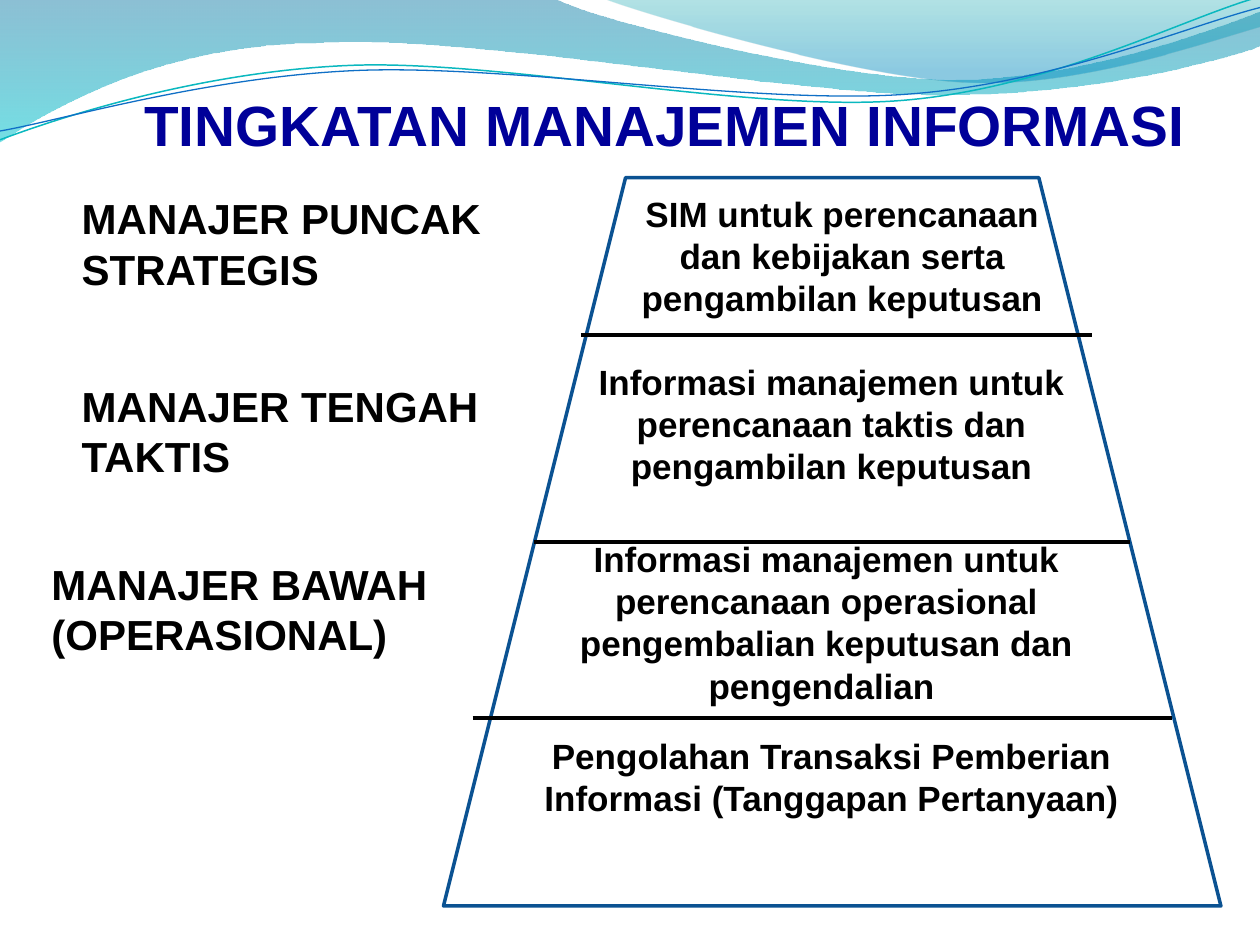
from lxml.etree import SubElement
from pptx import Presentation
from pptx.dml.color import RGBColor
from pptx.enum.shapes import MSO_CONNECTOR, MSO_SHAPE
from pptx.enum.text import MSO_ANCHOR, PP_ALIGN
from pptx.oxml.ns import qn
from pptx.util import Inches, Pt

BLACK = RGBColor(0, 0, 0)
WHITE = RGBColor(255, 255, 255)
NAVY = RGBColor(0, 0, 0x99)
EDGE = RGBColor(0x0B, 0x52, 0x92)
TEAL = RGBColor(0x0A, 0xB8, 0xBF)
BLUE = RGBColor(0x0F, 0x6F, 0xC6)

# Stops: position, colour, opacity in percent
DEEP = [(0, RGBColor(0, 0x74, 0xA1), 45), (1, RGBColor(0, 0xC6, 0xCF), 55)]
PALE = [(0, RGBColor(0, 0xA1, 0xA9), 30), (0.8, RGBColor(0, 0x8B, 0xBF), 45)]

# Paths: a start, then lines (x, y) and Bezier curves (two controls and an end)
WAVES = [
    ([(0, -0.01), (4.4, -0.01),
      (4.76, 0.17, 6.64, 0.63, 7.58, 0.63), (8.53, 0.63, 9.58, 0.26, 10, 0.09),
      (10.01, 0.36),
      (9.83, 0.44, 8.7, 0.76, 7.46, 0.75), (6.22, 0.75, 3.82, 0.28, 2.57, 0.34),
      (1.29, 0.35, 0.46, 0.83, -0.01, 1.13), (0, -0.01)], DEEP),
    ([(4.79, -0.01),
      (5.09, 0.11, 6.82, 0.62, 7.69, 0.65), (8.56, 0.69, 9.61, 0.32, 10, 0.21),
      (10, 0), (4.79, -0.01)], PALE),
]
STRANDS = [
    ([(0, 1.11),
      (0.48, 0.93, 1.58, 0.57, 2.77, 0.52), (3.95, 0.47, 5.93, 0.89, 7.13, 0.8),
      (8.33, 0.71, 9.38, 0.15, 9.98, -0.02)], TEAL, 0.85),
    ([(0, 1.04),
      (0.47, 0.96, 1.64, 0.61, 2.83, 0.56), (4.03, 0.51, 5.97, 0.83, 7.17, 0.75),
      (8.36, 0.67, 9.41, 0.21, 10, 0.06)], BLUE, 0.75),
]

# Offsets from the pyramid's corner: left, top, width, height
TIERS = [
    ("Pengolahan Transaksi Pemberian Informasi (Tanggapan Pertanyaan)",
     (0.23, 4.37, 5.7, 0.77)),
    ("Informasi manajemen untuk perencanaan operasional pengembalian "
     "keputusan dan pengendalian ", (0.54, 2.81, 5, 1.45)),
    ("Informasi manajemen untuk perencanaan taktis dan pengambilan keputusan",
     (1.01, 1.4, 4.14, 1.11)),
    ("SIM untuk perencanaan dan kebijakan serta pengambilan keputusan",
     (1.25, 0.07, 3.83, 1.11)),
]
# Offsets from the pyramid's corner: left, right, height
RULES = [(1.09, 5.15, 1.25), (0.72, 5.45, 2.89), (0.23, 5.78, 4.29)]

# Offsets from the column's corner: left, top, width
ROLES = [
    ("MANAJER PUNCAK STRATEGIS", 0.24, 0, 3.98),
    ("MANAJER TENGAH TAKTIS", 0.24, 1.49, 3.75),
    ("MANAJER BAWAH (OPERASIONAL)", 0, 2.9, 3.52),
]


def add_path(slide, parts, close):
    """Draw a freeform, turning each run of three curve points into a Bezier."""
    start, *steps = parts
    pen = slide.shapes.build_freeform(*map(Inches, start))
    for step in steps:
        pairs = zip(step[::2], step[1::2])
        pen.add_line_segments([(Inches(x), Inches(y)) for x, y in pairs], close=False)
    shape = pen.convert_to_shape()
    shape.shadow.inherit = False
    path = next(shape._element.iter(qn("a:path")))
    lines = iter(path.findall(qn("a:lnTo")))
    for step in steps:
        if len(step) == 2:
            next(lines)
            continue
        first, *others = [next(lines) for _ in range(3)]
        curve = SubElement(path, qn("a:cubicBezTo"))
        path.replace(first, curve)
        curve.append(first[0])
        for line in others:
            curve.append(line[0])
            path.remove(line)
    if close:
        SubElement(path, qn("a:close"))
    return shape


def add_wave(slide, parts, stops):
    shape = add_path(slide, parts, True)
    shape.line.fill.background()
    shape.fill.gradient()
    shape.fill.gradient_angle = 270
    for stop, (place, color, alpha) in zip(shape.fill.gradient_stops, stops):
        stop.position = place
        stop.color.rgb = color
    tags = shape.fill._xPr.iter(qn("a:srgbClr"))
    for tag, (place, color, alpha) in zip(tags, stops):
        SubElement(tag, qn("a:alpha"), val=str(alpha * 1000))


def add_banner(slide):
    for parts, stops in WAVES:
        add_wave(slide, parts, stops)
    for parts, color, width in STRANDS:
        shape = add_path(slide, parts, False)
        shape.fill.background()
        shape.line.color.rgb = color
        shape.line.width = Pt(width)


def add_text(slide, text, box, size, color=BLACK, align=PP_ALIGN.CENTER):
    frame = slide.shapes.add_textbox(*map(Inches, box)).text_frame
    frame.word_wrap = True
    para = frame.paragraphs[0]
    para.alignment = align
    run = para.add_run()
    run.text = text
    run.font.name = "Arial"
    run.font.size = Pt(size)
    run.font.bold = True
    run.font.color.rgb = color
    return frame


def add_title(slide, box):
    frame = add_text(slide, "TINGKATAN MANAJEMEN INFORMASI", box, 32.4, NAVY)
    frame.vertical_anchor = MSO_ANCHOR.BOTTOM
    frame.margin_left = frame.margin_right = frame.margin_bottom = 0


def add_rule(slide, left, right, y):
    line = slide.shapes.add_connector(
        MSO_CONNECTOR.STRAIGHT, Inches(left), Inches(y), Inches(right), Inches(y))
    line.line.color.rgb = BLACK
    line.line.width = Pt(2.25)
    SubElement(line._element.spPr, qn("a:effectLst"))


def add_pyramid(slide, box):
    x, y = box[:2]
    shape = slide.shapes.add_shape(MSO_SHAPE.TRAPEZOID, *map(Inches, box))
    shape.shadow.inherit = False
    shape.fill.solid()
    shape.fill.fore_color.rgb = WHITE
    shape.line.color.rgb = EDGE
    shape.line.width = Pt(2)
    for text, (dx, dy, wide, high) in TIERS:
        add_text(slide, text, (x + dx, y + dy, wide, high), 20)
    for left, right, dy in RULES:
        add_rule(slide, x + left, x + right, y + dy)


def add_roles(slide, x, y):
    for text, dx, dy, wide in ROLES:
        add_text(slide, text, (x + dx, y + dy, wide, 0.91), 24,
                 align=PP_ALIGN.LEFT)


def main():
    deck = Presentation()
    deck.slide_width, deck.slide_height = Inches(10), Inches(7.5)
    slide = deck.slides.add_slide(deck.slide_layouts[6])
    add_banner(slide)
    add_title(slide, (0.78, 0.3, 8.99, 0.95))
    add_pyramid(slide, (3.52, 1.41, 6.17, 5.78))
    add_roles(slide, 0.31, 1.48)
    deck.save("out.pptx")


if __name__ == "__main__":
    main()
